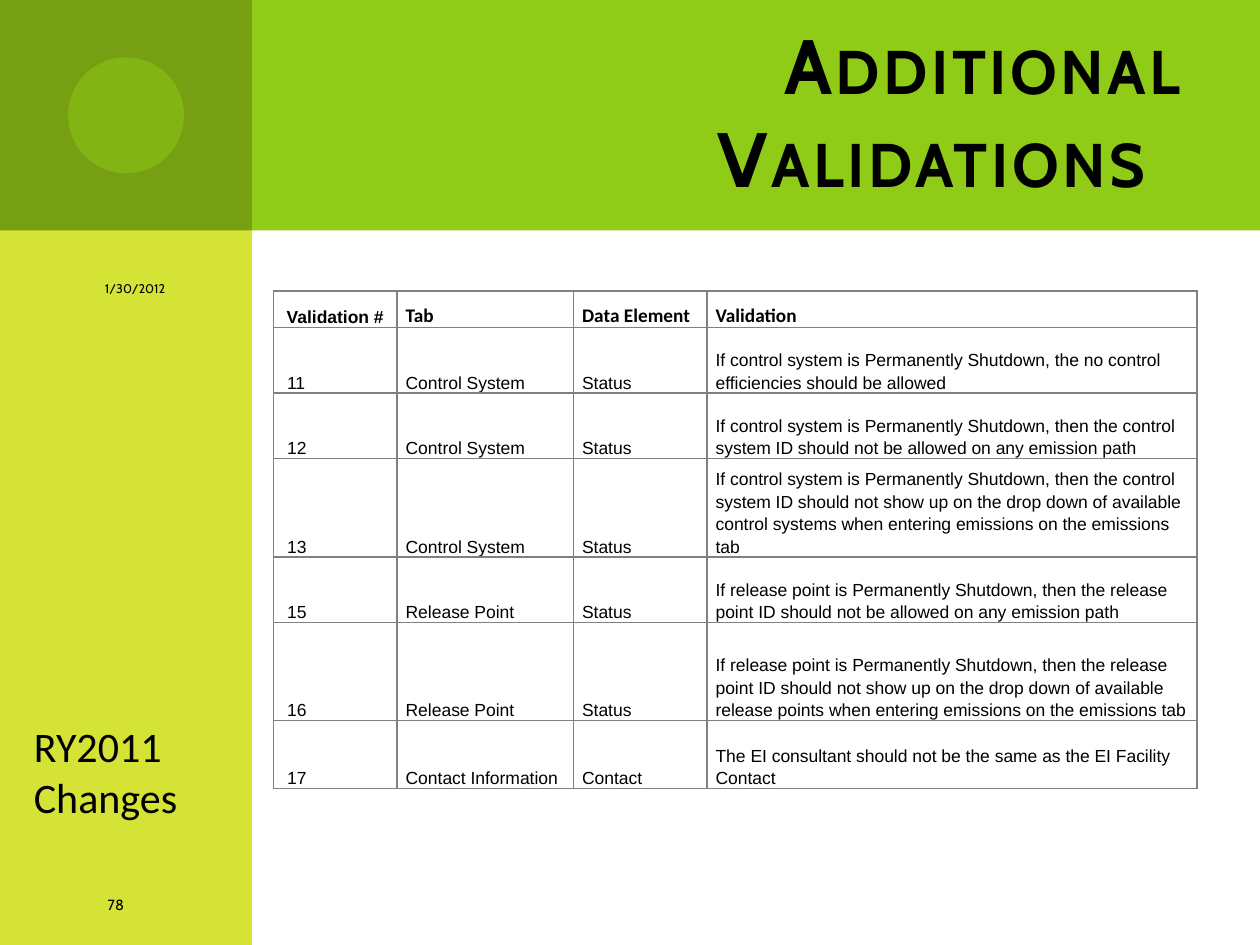
"""Build the slide listing additional validations for RY2011."""
from lxml import etree
from pptx import Presentation
from pptx.dml.color import RGBColor
from pptx.enum.shapes import MSO_SHAPE
from pptx.enum.text import MSO_ANCHOR, MSO_AUTO_SIZE, PP_ALIGN
from pptx.oxml.ns import qn
from pptx.util import Inches, Pt

RECT, OVAL = MSO_SHAPE.RECTANGLE, MSO_SHAPE.OVAL
TOP, MIDDLE, BOTTOM = MSO_ANCHOR.TOP, MSO_ANCHOR.MIDDLE, MSO_ANCHOR.BOTTOM
LEFT, CENTER, RIGHT = PP_ALIGN.LEFT, PP_ALIGN.CENTER, PP_ALIGN.RIGHT
GREEN = RGBColor(0x8F, 0xCB, 0x17)
LIME = RGBColor(0xD4, 0xE3, 0x36)
DARK_GREEN = RGBColor(0x76, 0x9F, 0x11)
BLACK = RGBColor(0, 0, 0)
WHITE = RGBColor(0xFF, 0xFF, 0xFF)
GRAY = RGBColor(0x80, 0x80, 0x80)

WIDTH, HEIGHT = 10, 7.5
SIDE, BAND, DOT = 2, 1.83, 0.92
TITLE = "Additional Validations"
HEADER = ("Validation #", "Tab", "Data Element", "Validation")
ROWS = [
    (" 11", "Control System", "Status",
     "If control system is Permanently Shutdown, the no control efficiencies should be allowed"),
    (" 12", "Control System", "Status",
     "If control system is Permanently Shutdown, then the control system ID should not be "
     "allowed on any emission path"),
    (" 13", "Control System", "Status",
     "If control system is Permanently Shutdown, then the control system ID should not show up "
     "on the drop down of available control systems when entering emissions on the emissions tab"),
    (" 15", "Release Point", "Status",
     "If release point is Permanently Shutdown, then the release point ID should not be "
     "allowed on any emission path"),
    (" 16", "Release Point", "Status",
     "If release point is Permanently Shutdown, then the release point ID should not show up "
     "on the drop down of available release points when entering emissions on the emissions tab"),
    (" 17", "Contact Information", "Contact",
     "The EI consultant should not be the same as the EI Facility Contact"),
]
COL_WIDTHS = (0.98, 1.4, 1.06, 3.89)
ROW_HEIGHTS = (0.29, 0.52, 0.52, 0.78, 0.52, 0.78, 0.54)
BACKDROP = [
    (RECT, (0.5, 0, WIDTH - 0.5, BAND), GREEN, None),
    (RECT, (0, 0, SIDE, HEIGHT), LIME, None),
    (RECT, (0, 0, SIDE, BAND), DARK_GREEN, None),
    (OVAL, ((SIDE - DOT) / 2, (BAND - DOT) / 2, DOT, DOT), GREEN, 50),
]
SIDE_TEXTS = [
    ("RY2011 Changes", (0.17, 5.67, 1.75, 0.91), dict(size=24, font="Calibri")),
    ("1/30/2012", (0.58, 2.08, 0.83, 0.4),
     dict(size=9, font="Cabin", align=RIGHT, anchor=MIDDLE, small=True)),
    ("78", (0.42, 7, 1, 0.33),
     dict(size=10.5, font="Cabin", align=CENTER, anchor=MIDDLE, small=True)),
]


def inches(box):
    return [Inches(v) for v in box]


def write(tf, text, size=10, font="Arial", bold=False, align=LEFT, anchor=None,
          spacing=None, small=False, tracking=None):
    p = tf.paragraphs[0]
    p.alignment = align
    if spacing:
        p.line_spacing = spacing
    if anchor is not None:
        tf.vertical_anchor = anchor
    r = p.add_run()
    r.text = text
    r.font.size, r.font.name, r.font.bold = Pt(size), font, bold
    r.font.color.rgb = BLACK
    rPr = r.font._element
    if small:
        rPr.set("cap", "small")
    if tracking:
        rPr.set("spc", str(tracking * 100))


def add_backdrop(s, kind, box, color, opacity):
    sp = s.shapes.add_shape(kind, *inches(box))
    sp.shadow.inherit = False
    sp.fill.solid()
    sp.fill.fore_color.rgb = color
    sp.line.fill.background()
    if opacity:
        clr = sp._element.spPr.find(".//" + qn("a:srgbClr"))
        etree.SubElement(clr, qn("a:alpha")).set("val", str(opacity * 1000))


def add_borders(cell):
    tcPr = cell._tc.get_or_add_tcPr()
    for i, side in enumerate(("a:lnL", "a:lnR", "a:lnT", "a:lnB")):
        ln = etree.Element(qn(side), w=str(Pt(1)))
        fill = etree.SubElement(ln, qn("a:solidFill"))
        etree.SubElement(fill, qn("a:srgbClr")).set("val", str(GRAY))
        tcPr.insert(i, ln)


def add_validations(s):
    box = (2.17, 2.31, sum(COL_WIDTHS), sum(ROW_HEIGHTS))
    table = s.shapes.add_table(len(ROW_HEIGHTS), len(COL_WIDTHS), *inches(box)).table
    for col, width in zip(table.columns, COL_WIDTHS):
        col.width = Inches(width)
    for row, height in zip(table.rows, ROW_HEIGHTS):
        row.height = Inches(height)
    for i, values in enumerate([HEADER] + ROWS):
        for j, text in enumerate(values):
            cell = table.cell(i, j)
            cell.margin_left = cell.margin_right = Inches(0.07)
            cell.margin_top = cell.margin_bottom = 0
            cell.vertical_anchor = BOTTOM
            cell.fill.solid()
            cell.fill.fore_color.rgb = WHITE
            style = dict(bold=i == 0, spacing=1.15)
            if i == 0 and j == 0:
                style.update(align=CENTER)
            elif i == 0:
                style.update(size=11, font="Calibri")
            write(cell.text_frame, text, **style)
            add_borders(cell)


def main():
    prs = Presentation()
    prs.slide_width, prs.slide_height = Inches(WIDTH), Inches(HEIGHT)
    s = prs.slides.add_slide(prs.slide_layouts[5])
    for part in BACKDROP:
        add_backdrop(s, *part)

    title = s.shapes.title
    title.left, title.top, title.width, title.height = inches((2.67, 0.25, 6.83, 1.25))
    title.text_frame.word_wrap = True
    title.text_frame.auto_size = MSO_AUTO_SIZE.NONE
    write(title.text_frame, TITLE, size=44, font="Cabin", bold=True, align=RIGHT,
          anchor=MIDDLE, small=True, tracking=2)
    s.shapes._spTree.append(title._element)

    add_validations(s)
    for text, box, style in SIDE_TEXTS:
        tf = s.shapes.add_textbox(*inches(box)).text_frame
        tf.word_wrap = True
        write(tf, text, **{"anchor": TOP, **style})
    prs.save("out.pptx")


if __name__ == "__main__":
    main()
